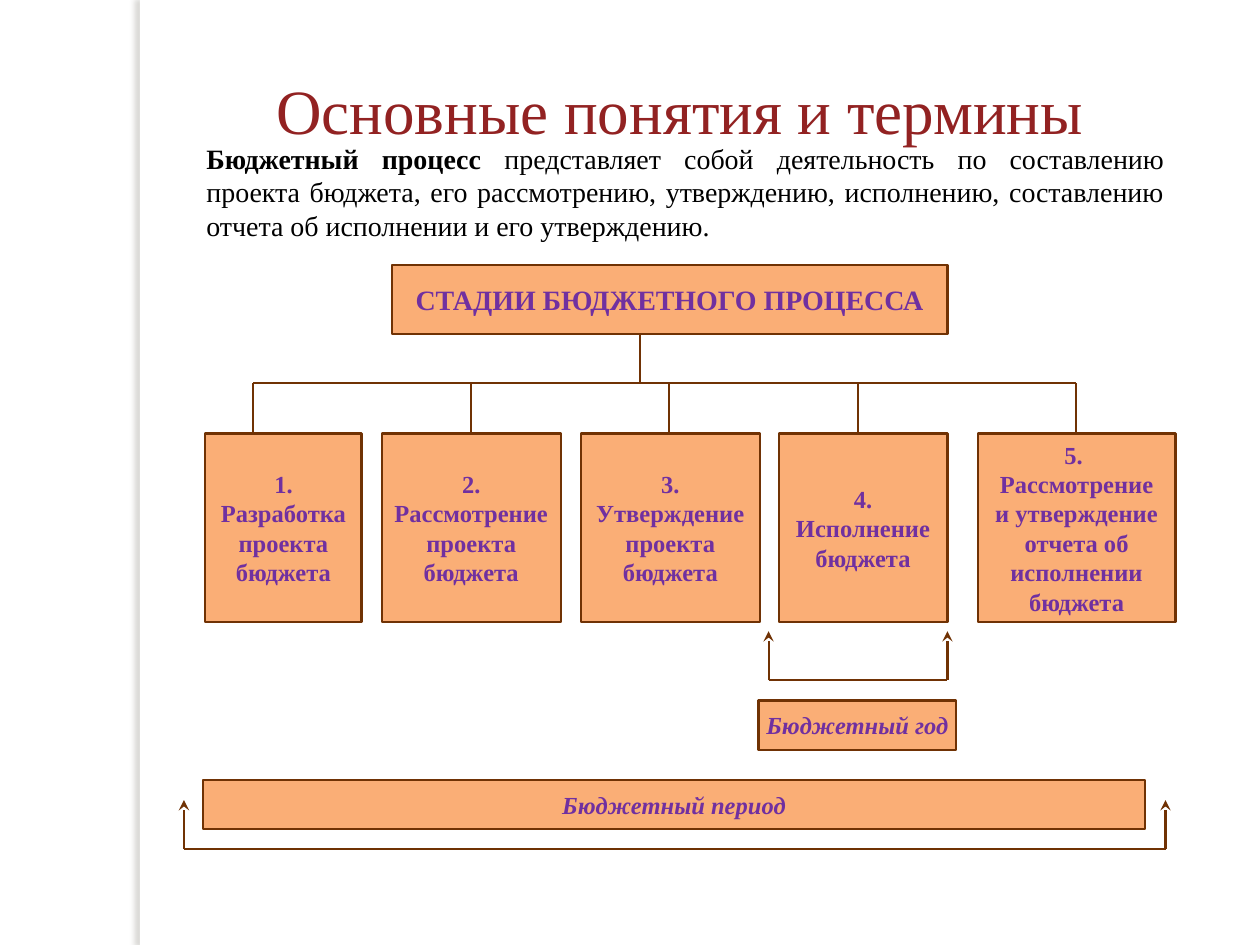
from dataclasses import dataclass

import lxml.etree
import pptx
import pptx.dml.color
import pptx.enum.shapes
import pptx.enum.text
import pptx.oxml
import pptx.oxml.ns
import pptx.util

Inches = pptx.util.Inches
Pt = pptx.util.Pt
RGBColor = pptx.dml.color.RGBColor
Align = pptx.enum.text.PP_ALIGN
Anchor = pptx.enum.text.MSO_ANCHOR
qn = pptx.oxml.ns.qn

WHITE = RGBColor(0xFF, 0xFF, 0xFF)
BLACK = RGBColor(0, 0, 0)
PEACH = RGBColor(0xFA, 0xAE, 0x76)
BROWN = RGBColor(0x70, 0x32, 0x04)
PURPLE = RGBColor(0x70, 0x30, 0xA0)
DARK_RED = RGBColor(0x92, 0x22, 0x22)
FONT = "Times New Roman"
LINE_WIDTH = Pt(1.25)
RISE = 0.39
BUS_Y = 3.04
STAGE_TOP = 3.44
STAGE_HEIGHT = 1.5


@dataclass
class Box:
    left: float
    top: float
    width: float
    height: float
    text: str
    size: int = 14
    italic: bool = False
    wrap: bool = True


@dataclass
class Stage:
    left: float
    width: float
    drop_x: float
    text: str


@dataclass
class Bracket:
    left: float
    right: float
    bottom: float


HEADING = Box(3.11, 2.1, 4.41, 0.55, "СТАДИИ БЮДЖЕТНОГО ПРОЦЕССА", size=16)
STAGES = [
    Stage(1.63, 1.24, 2.01, "1. Разработка проекта бюджета"),
    Stage(3.03, 1.42, 3.74, "2. Рассмотрение проекта бюджета"),
    Stage(4.61, 1.42, 5.31, "3. Утверждение проекта бюджета"),
    Stage(6.18, 1.34, 6.81, "4. Исполнение бюджета"),
    Stage(7.76, 1.57, 8.54, "5. \nРассмотрение и утверждение отчета об исполнении бюджета"),
]
PERIODS = [
    (Box(6.02, 5.56, 1.57, 0.39, "Бюджетный год", italic=True, wrap=False), Bracket(6.1, 7.52, 5.4)),
    (Box(1.61, 6.19, 7.48, 0.39, "Бюджетный период", italic=True, wrap=False), Bracket(1.46, 9.25, 6.74)),
]


def style_run(run, size: int, color: RGBColor, bold: bool = False, italic: bool = False) -> None:
    """Set the font of one run."""
    run.font.name = FONT
    run.font.size = Pt(size)
    run.font.color.rgb = color
    run.font.bold = bold
    run.font.italic = italic


def draw_box(slide, box: Box) -> None:
    """Draw a filled box with a centred caption."""
    shape = slide.shapes.add_shape(
        pptx.enum.shapes.MSO_SHAPE.RECTANGLE,
        Inches(box.left), Inches(box.top), Inches(box.width), Inches(box.height),
    )
    shape.shadow.inherit = False
    shape.fill.solid()
    shape.fill.fore_color.rgb = PEACH
    shape.line.color.rgb = BROWN
    shape.line.width = LINE_WIDTH
    caption = shape.text_frame
    caption.word_wrap = box.wrap
    caption.vertical_anchor = Anchor.MIDDLE
    caption.text = box.text
    for paragraph in caption.paragraphs:
        paragraph.alignment = Align.CENTER
        for run in paragraph.runs:
            style_run(run, box.size, PURPLE, bold=True, italic=box.italic)


def draw_line(slide, x1: float, y1: float, x2: float, y2: float, arrow: bool = False) -> None:
    """Draw a straight line, with an arrowhead at its end on request."""
    line = slide.shapes.add_connector(
        pptx.enum.shapes.MSO_CONNECTOR.STRAIGHT, Inches(x1), Inches(y1), Inches(x2), Inches(y2)
    )
    line.line.color.rgb = BROWN
    line.line.width = LINE_WIDTH
    properties = line._element.spPr
    if arrow:
        lxml.etree.SubElement(properties.find(qn("a:ln")), qn("a:tailEnd"), type="stealth")
    lxml.etree.SubElement(properties, qn("a:effectLst"))


def draw_bracket(slide, bracket: Bracket) -> None:
    """Draw a base line with an upward arrow at each end."""
    draw_line(slide, bracket.left, bracket.bottom, bracket.right, bracket.bottom)
    for x in (bracket.left, bracket.right):
        draw_line(slide, x, bracket.bottom, x, bracket.bottom - RISE, arrow=True)


def draw_margin_strip(slide) -> None:
    """Draw the white strip that casts a shadow to the left."""
    strip = slide.shapes.add_shape(
        pptx.enum.shapes.MSO_SHAPE.RECTANGLE, Inches(1.11), Inches(0), Inches(0.08), Inches(7.5)
    )
    strip.shadow.inherit = False
    strip.fill.solid()
    strip.fill.fore_color.rgb = WHITE
    strip.line.fill.background()
    effects = strip._element.spPr.find(qn("a:effectLst"))
    shadow = lxml.etree.SubElement(
        effects, qn("a:outerShdw"),
        blurRad=str(Pt(3)), dist=str(Pt(3)), dir="10800000", algn="tl", rotWithShape="0",
    )
    color = lxml.etree.SubElement(shadow, qn("a:srgbClr"), val="736F63")
    lxml.etree.SubElement(color, qn("a:alpha"), val="25000")


def draw_definition(slide) -> None:
    """Write the definition with its term in bold."""
    definition = slide.shapes.add_textbox(Inches(1.54), Inches(1.07), Inches(7.8), Inches(0.79)).text_frame
    definition.word_wrap = True
    paragraph = definition.paragraphs[0]
    paragraph.alignment = Align.JUSTIFY
    parts = [
        ("Бюджетный процесс ", True),
        ("представляет собой деятельность по составлению проекта бюджета, его рассмотрению, "
         "утверждению, исполнению, составлению отчета об исполнении и его утверждению.", False),
    ]
    for text, bold in parts:
        run = paragraph.add_run()
        run.text = text
        style_run(run, 16, BLACK, bold=bold)


def draw_title(slide) -> None:
    """Write the slide title."""
    title = slide.shapes.add_textbox(Inches(1.22), Inches(0.47), Inches(8.35), Inches(0.6)).text_frame
    title.word_wrap = True
    title.margin_top = Inches(0.1)
    title.margin_bottom = Inches(0)
    title.text = "Основные понятия и термины"
    title.paragraphs[0].alignment = Align.CENTER
    style_run(title.paragraphs[0].runs[0], 36, DARK_RED)


def main() -> None:
    """Build the slide and save it."""
    deck = pptx.Presentation()
    deck.slide_width = Inches(10)
    deck.slide_height = Inches(7.5)
    slide = deck.slides.add_slide(deck.slide_layouts[6])
    draw_margin_strip(slide)
    draw_definition(slide)
    draw_box(slide, HEADING)
    draw_line(slide, 5.08, HEADING.top + HEADING.height, 5.08, BUS_Y)
    draw_line(slide, STAGES[0].drop_x, BUS_Y, STAGES[-1].drop_x, BUS_Y)
    for stage in STAGES:
        draw_box(slide, Box(stage.left, STAGE_TOP, stage.width, STAGE_HEIGHT, stage.text))
        draw_line(slide, stage.drop_x, BUS_Y, stage.drop_x, BUS_Y + RISE)
    for box, bracket in PERIODS:
        draw_bracket(slide, bracket)
        draw_box(slide, box)
    draw_title(slide)


    deck.save("out.pptx")


if __name__ == "__main__":
    main()
